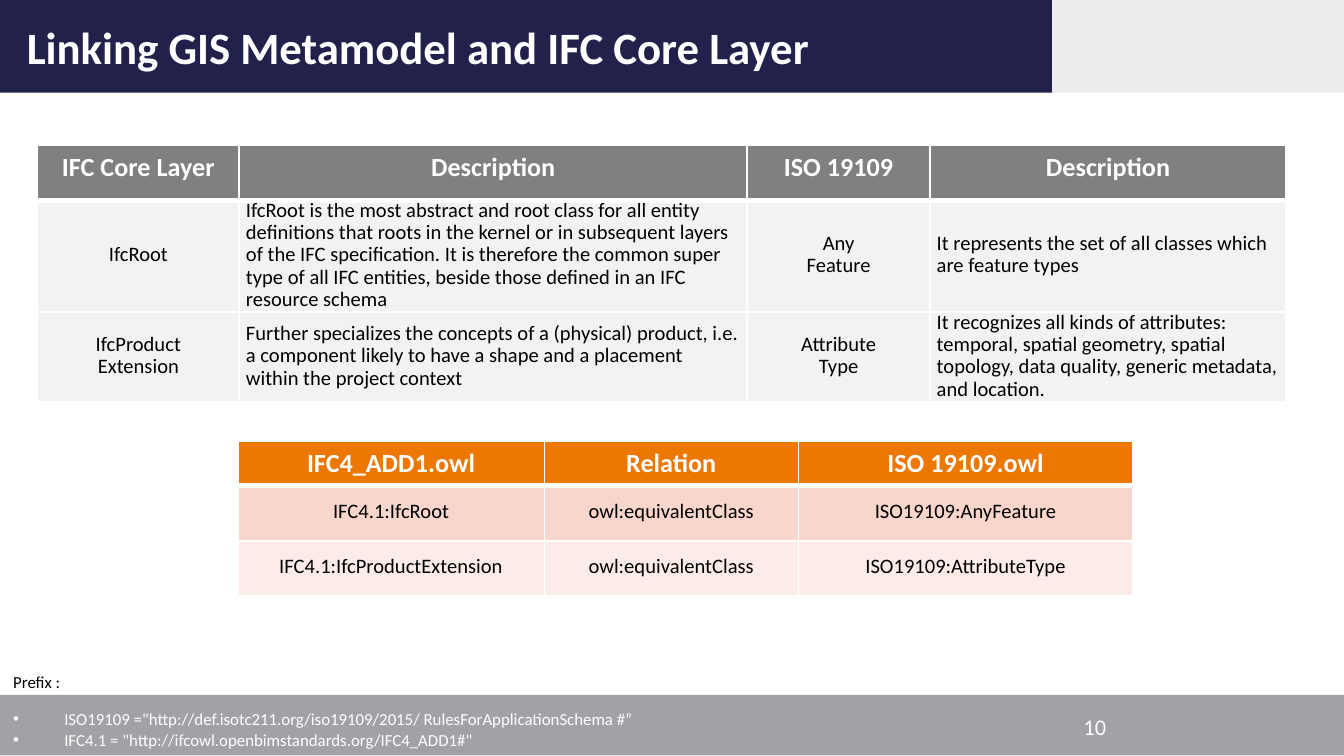
from dataclasses import dataclass

from lxml import etree
from pptx import Presentation
from pptx.dml.color import RGBColor
from pptx.enum.shapes import MSO_SHAPE
from pptx.enum.text import MSO_ANCHOR, PP_ALIGN
from pptx.oxml.ns import qn
from pptx.util import Inches, Pt

RECT = MSO_SHAPE.RECTANGLE
TOP, MIDDLE = MSO_ANCHOR.TOP, MSO_ANCHOR.MIDDLE
LEFT, CENTER, RIGHT = PP_ALIGN.LEFT, PP_ALIGN.CENTER, PP_ALIGN.RIGHT


@dataclass(frozen=True)
class Theme:
    font: str = "Calibri"
    title: int = 24
    heading: int = 14
    number: int = 12
    body: int = 11
    note: int = 9
    white: str = "FFFFFF"
    black: str = "000000"
    navy: str = "22214B"
    pale: str = "ECECED"
    footer: str = "A1A2A6"
    gray: str = "808080"
    gray_row: str = "F2F2F2"
    orange: str = "ED7703"
    peach: str = "F8D6CC"
    blush: str = "FCECE7"


class Deck:
    """Adds styled elements to the current slide."""

    def __init__(self, prs, theme):
        self.theme = theme
        self.s = prs.slides.add_slide(prs.slide_layouts[6])

    def style(self, p, size, color, bold=False, align=LEFT):
        p.alignment = align
        for r in p.runs:
            r.font.name = self.theme.font
            r.font.size = Pt(size)
            r.font.bold = bold
            r.font.color.rgb = RGBColor.from_string(color)

    def band(self, x, y, w, h, color):
        sp = self.s.shapes.add_shape(RECT, Inches(x), Inches(y), Inches(w), Inches(h))
        sp.shadow.inherit = False
        sp.fill.solid()
        sp.fill.fore_color.rgb = RGBColor.from_string(color)
        sp.line.fill.background()

    def text(self, x, y, w, h, text, size, color, bold=False, align=LEFT,
             anchor=MIDDLE, left=0.1, right=0.1):
        sp = self.s.shapes.add_textbox(Inches(x), Inches(y), Inches(w), Inches(h))
        tf = sp.text_frame
        tf.word_wrap = True
        tf.vertical_anchor = anchor
        tf.margin_left, tf.margin_right = Inches(left), Inches(right)
        tf.text = text
        self.style(tf.paragraphs[0], size, color, bold, align)
        return tf

    def prefixes(self, x, y, w, h, label, items):
        t = self.theme
        tf = self.text(x, y, w, h, label, t.note, t.black, anchor=TOP)
        for item in items:
            p = tf.add_paragraph()
            p.text = item
            pPr = p._p.get_or_add_pPr()
            pPr.set("marL", str(Inches(0.38)))
            pPr.set("indent", str(-Inches(0.38)))
            etree.SubElement(pPr, qn("a:buFont"), typeface="Arial")
            etree.SubElement(pPr, qn("a:buChar"), char="•")
            self.style(p, t.note, t.white)
        for p in tf.paragraphs:
            p.line_spacing = 1.07
        tf.paragraphs[0].space_after = tf.paragraphs[-1].space_after = Pt(8)

    def borders(self, cell, top, bottom):
        tcPr = cell._tc.get_or_add_tcPr()
        widths = {"lnL": 1, "lnR": 1, "lnT": top, "lnB": bottom}
        for i, (tag, width) in enumerate(widths.items()):
            ln = etree.Element(qn("a:" + tag), w=str(Pt(width)))
            fill = etree.SubElement(ln, qn("a:solidFill"))
            etree.SubElement(fill, qn("a:srgbClr"), val=self.theme.white)
            tcPr.insert(i, ln)

    def table(self, x, y, cols, heights, rows, fills, left_cols=()):
        t = self.theme
        frame = self.s.shapes.add_table(
            len(rows), len(cols), Inches(x), Inches(y),
            Inches(sum(cols)), Inches(sum(heights)))
        table = frame.table
        for col, width in zip(table.columns, cols):
            col.width = Inches(width)
        for i, (row, height) in enumerate(zip(rows, heights)):
            table.rows[i].height = Inches(height)
            for j, value in enumerate(row):
                cell = table.cell(i, j)
                cell.fill.solid()
                cell.fill.fore_color.rgb = RGBColor.from_string(fills[i])
                self.borders(cell, 3 if i == 1 else 1, 3 if i == 0 else 1)
                cell.text_frame.text = value
                p = cell.text_frame.paragraphs[0]
                if i == 0:
                    self.style(p, t.heading, t.white, True, CENTER)
                    continue
                cell.vertical_anchor = MIDDLE
                cell.margin_left = cell.margin_right = Inches(0.05)
                cell.margin_top = cell.margin_bottom = 0
                p.line_spacing = Pt(12)
                self.style(p, t.body, t.black, align=LEFT if j in left_cols else CENTER)


def main():
    prs = Presentation()
    prs.slide_width, prs.slide_height = Inches(10), Inches(10 * 9 / 16)
    t = Theme()
    deck = Deck(prs, t)

    deck.band(0, 5.17, 10, 0.45, t.footer)
    deck.band(0, 0, 7.83, 0.69, t.navy)
    deck.band(7.83, 0, 2.17, 0.69, t.pale)
    deck.text(0.2, 0.01, 7.64, 0.68, "Linking GIS Metamodel and IFC Core Layer",
              t.title, t.white, bold=True, left=0)
    deck.text(7.69, 5.26, 0.54, 0.3, "10", t.number, t.white, align=RIGHT, right=0)

    deck.table(1.77, 3.28, [2.28, 1.89, 2.49], [0.33, 0.41, 0.41], [
        ["IFC4_ADD1.owl", "Relation", "ISO 19109.owl"],
        ["IFC4.1:IfcRoot", "owl:equivalentClass", "ISO19109:AnyFeature"],
        ["IFC4.1:IfcProductExtension", "owl:equivalentClass", "ISO19109:AttributeType"],
    ], [t.orange, t.peach, t.blush])

    deck.table(0.28, 1.08, [1.5, 3.78, 1.36, 2.65], [0.41, 0.83, 0.67], [
        ["IFC Core Layer", "Description", "ISO 19109", "Description"],
        ["IfcRoot",
         "IfcRoot is the most abstract and root class for all entity definitions "
         "that roots in the kernel or in subsequent layers of the IFC specification. "
         "It is therefore the common super type of all IFC entities, beside those "
         "defined in an IFC resource schema",
         "Any\vFeature",
         "It represents the set of all classes which are feature types"],
        ["IfcProduct\vExtension",
         "Further specializes the concepts of a (physical) product, i.e. a component "
         "likely to have a shape and a placement within the project context",
         "Attribute\vType",
         "It recognizes all kinds of attributes: temporal, spatial geometry, spatial "
         "topology, data quality, generic metadata, and location."],
    ], [t.gray, t.gray_row, t.gray_row], left_cols=(1, 3))

    deck.prefixes(0, 4.94, 5.98, 0.7, "Prefix :", [
        'ISO19109 ="http://def.isotc211.org/iso19109/2015/ RulesForApplicationSchema #”',
        'IFC4.1 = "http://ifcowl.openbimstandards.org/IFC4_ADD1#"',
    ])
    prs.save("out.pptx")


if __name__ == "__main__":
    main()
